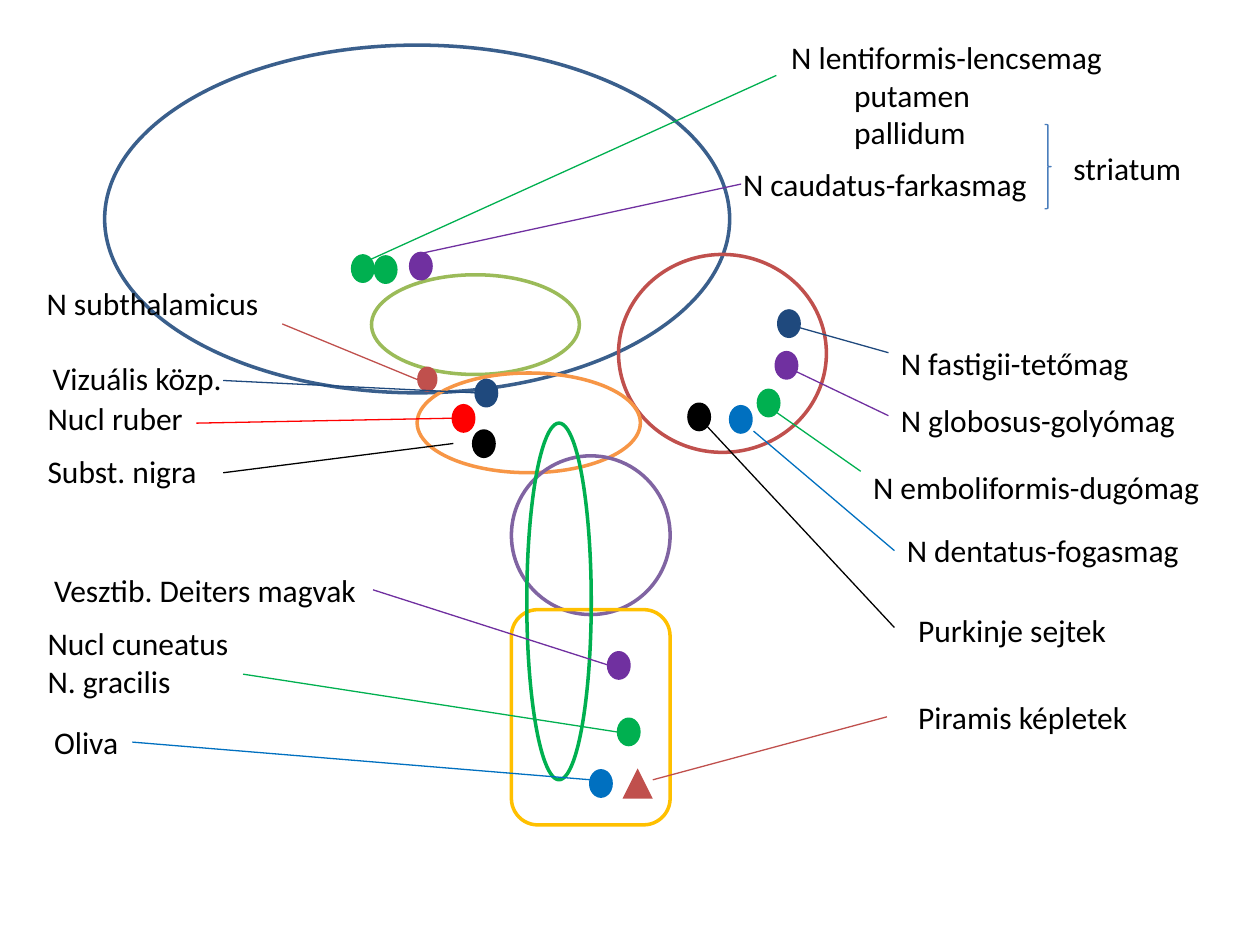
import pptx
import pptx.dml.color
import pptx.enum.shapes
import pptx.enum.text
import pptx.oxml
import pptx.util

Cm, Pt = pptx.util.Cm, pptx.util.Pt
MSO = pptx.enum.shapes.MSO_SHAPE

COLORS = {
    "black": "000000", "blue": "3A5F8C", "brick": "C0504D", "olive": "9BBB59",
    "orange": "F79646", "mauve": "8064A2", "gold": "FFC000", "green": "00B050",
    "red": "FF0000", "sky": "0070C0", "violet": "7030A0", "navy": "1F497D",
    "brace": "4B7EBC",
}
FONT = {"name": "Calibri", "size": Pt(18)}
LEFT, RIGHT = 1, 3
THICK, THIN = 2, 0.75
DOT_W, DOT_H = 0.41, 0.51
LINE_H = 1.02

OUTLINES = [
    (MSO.OVAL, "blue", (2.11, 0.91, 12.6, 7.01)),
    (MSO.OVAL, "brick", (12.47, 5.13, 4.19, 3.99)),
    (MSO.OVAL, "olive", (7.49, 5.54, 4.19, 2.01)),
    (MSO.OVAL, "orange", (8.41, 7.52, 4.5, 2.01)),
    (MSO.OVAL, "mauve", (10.31, 9.19, 3.2, 3.2)),
    (MSO.ROUNDED_RECTANGLE, "gold", (10.31, 12.29, 3.2, 4.34)),
    (MSO.OVAL, "green", (10.62, 8.53, 1.3, 7.19)),
]

NUCLEI = [
    ("red", 9.14, 8.18), ("black", 9.55, 8.69), ("green", 12.47, 14.5),
    ("sky", 11.91, 15.54), ("violet", 12.27, 13.16), ("navy", 9.6, 7.67),
    ("navy", 15.7, 6.27), ("violet", 15.65, 7.11), ("green", 15.29, 7.87),
    ("sky", 14.73, 8.2), ("black", 13.89, 8.15), ("violet", 8.28, 5.11),
    ("green", 7.11, 5.16), ("green", 7.57, 5.18),
]

LABELS = [
    (["Nucl ruber"], (0.71, 7.92, 3.28, LINE_H), "red", (3.96, 8.53, 9.14, 8.43), None),
    (["Subst. nigra"], (0.71, 8.99, 3.56, LINE_H), "black", (4.5, 9.53, 9.14, 8.94), None),
    (["Nucl cuneatus", "N. gracilis"], (0.71, 12.45, 4.19, 1.8), "green",
     (4.9, 13.59, 12.47, 14.76), None),
    (["Oliva"], (0.84, 14.45, 1.83, LINE_H), "sky", (2.67, 14.96, 11.91, 15.72), RIGHT),
    (["Vesztib. Deiters magvak"], (0.84, 11.38, 6.68, LINE_H), "violet",
     (7.52, 11.89, 12.27, 13.41), RIGHT),
    (["Vizuális közp."], (0.81, 7.11, 3.96, LINE_H), "navy", (4.5, 7.67, 9.6, 7.92), None),
    (["N fastigii-tetőmag"], (17.91, 6.81, 5.16, LINE_H), "navy",
     (17.91, 7.11, 15.85, 6.53), None),
    (["N globosus-golyómag"], (17.91, 7.95, 6.1, LINE_H), "violet",
     (17.91, 8.38, 16.05, 7.49), None),
    (["N emboliformis-dugómag"], (17.35, 9.32, 7.16, LINE_H), "green",
     (17.35, 9.5, 15.49, 8.2), None),
    (["N dentatus-fogasmag"], (18.03, 10.59, 6.07, LINE_H), "sky",
     (18.03, 11.1, 15.19, 8.69), LEFT),
    (["Purkinje sejtek"], (18.26, 12.19, 4.34, LINE_H), "black",
     (18.03, 12.65, 14.25, 8.59), None),
    (["N subthalamicus"], (0.69, 5.61, 4.83, LINE_H), "brick", (5.69, 6.53, 8.41, 7.65), None),
    (["N caudatus-farkasmag"], (14.73, 3.2, 6.3, LINE_H), "violet",
     (14.94, 3.71, 8.48, 5.11), None),
    (["N lentiformis-lencsemag", "\tputamen", "\tpallidum"], (15.7, 0.64, 6.86, 2.57),
     "green", (15.65, 1.52, 7.47, 5.23), None),
    (["Piramis képletek"], (18.26, 13.94, 4.78, LINE_H), "brick",
     (17.88, 14.45, 13.16, 15.72), None),
]


class Diagram:
    """Hold the drawing style and the current slide."""

    def __init__(self, s):
        self.s = s

    def color(self, name):
        return pptx.dml.color.RGBColor.from_string(COLORS[name])

    def shape(self, kind, box, fill=None, line=None, width=THICK):
        sp = self.s.shapes.add_shape(kind, *map(Cm, box))
        sp.shadow.inherit = False
        if fill:
            sp.fill.solid()
            sp.fill.fore_color.rgb = self.color(fill)
        else:
            sp.fill.background()
        if line:
            sp.line.color.rgb = self.color(line)
            sp.line.width = Pt(width)
        else:
            sp.line.fill.background()
        return sp

    def text(self, lines, box):
        sp = self.s.shapes.add_textbox(*map(Cm, box))
        tf = sp.text_frame
        tf.word_wrap = False
        tf.auto_size = pptx.enum.text.MSO_AUTO_SIZE.SHAPE_TO_FIT_TEXT
        tf.text = "\n".join(lines)
        for p in tf.paragraphs:
            for key, value in FONT.items():
                setattr(p.font, key, value)
            p.font.color.rgb = self.color("black")
        return sp

    def leader(self, ends, color, label, side):
        c = self.s.shapes.add_connector(
            pptx.enum.shapes.MSO_CONNECTOR.STRAIGHT, *map(Cm, ends))
        c.line.color.rgb = self.color(color)
        c.line.width = Pt(THIN)
        pr = c._element.spPr
        pr.append(pptx.oxml.parse_xml(
            '<a:effectLst xmlns:a="http://schemas.openxmlformats.org/drawingml/2006/main"/>'))
        if side is not None:
            c.begin_connect(label, side)


def main():
    prs = pptx.Presentation()
    prs.slide_width, prs.slide_height = Cm(25.4), Cm(19.05)
    d = Diagram(prs.slides.add_slide(prs.slide_layouts[6]))
    for kind, color, box in OUTLINES:
        d.shape(kind, box, line=color)
    for color, x, y in NUCLEI:
        d.shape(MSO.OVAL, (x, y, DOT_W, DOT_H), color, color)
    d.shape(MSO.OVAL, (8.41, 7.39, DOT_W, DOT_H), "brick")
    d.shape(MSO.ISOSCELES_TRIANGLE, (12.55, 15.49, 0.61, 0.61), "brick")
    for lines, box, color, ends, side in LABELS:
        d.leader(ends, color, d.text(lines, box), side)
    d.shape(MSO.RIGHT_BRACE, (21.06, 2.51, 0.13, 1.7), line="brace", width=THIN)
    d.text(["striatum"], (21.39, 2.87, 2.69, LINE_H))
    prs.save("out.pptx")


if __name__ == "__main__":
    main()
